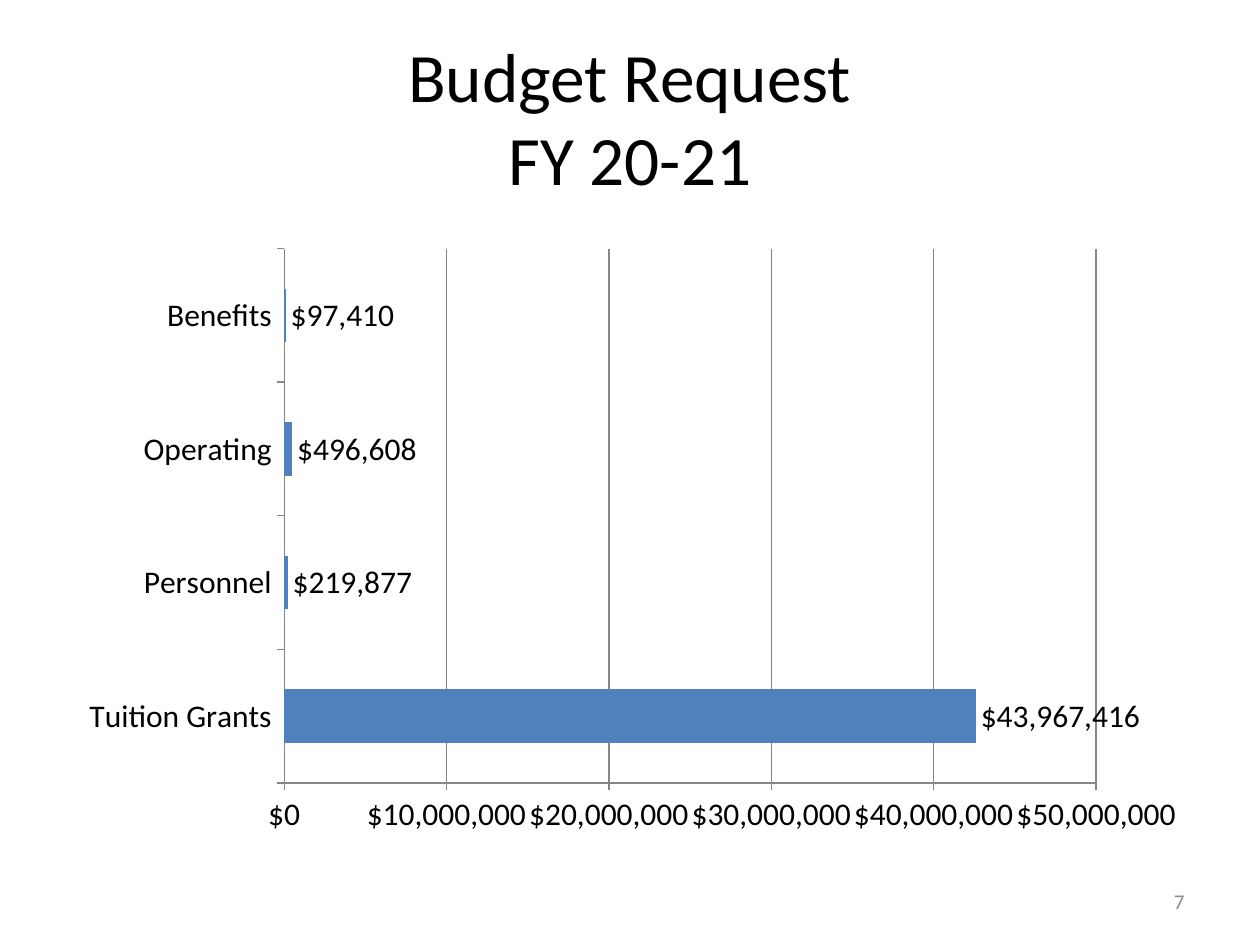
from dataclasses import dataclass

from lxml.etree import SubElement
from pptx import Presentation
from pptx.chart.data import CategoryChartData
from pptx.dml.color import RGBColor
from pptx.enum.chart import XL_CHART_TYPE, XL_LABEL_POSITION, XL_TICK_MARK
from pptx.enum.text import MSO_ANCHOR, MSO_AUTO_SIZE, PP_ALIGN
from pptx.oxml.ns import qn
from pptx.util import Pt


@dataclass(frozen=True)
class Theme:
    """Colours, font and type sizes of the slide."""
    font: str = "Calibri"
    text: RGBColor = RGBColor(0x00, 0x00, 0x00)
    muted: RGBColor = RGBColor(0x8C, 0x8C, 0x8C)
    bar: RGBColor = RGBColor(0x4F, 0x81, 0xBD)
    grid: RGBColor = RGBColor(0x86, 0x86, 0x86)
    title_size: float = 39.6
    chart_size: float = 18
    number_size: float = 12


THEME = Theme()
CURRENCY = '"$"#,##0'
BUDGET = {"Tuition Grants": 42598455, "Personnel": 219877, "Operating": 496608, "Benefits": 95796}
LABEL_OVERRIDES = {0: "$43,967,416", 3: "$97,410"}
PLOT_LAYOUT = {"layoutTarget": "inner", "xMode": "edge", "yMode": "edge",
               "x": 0.195, "y": 0.045, "w": 0.716, "h": 0.857}


def style_font(font, size, color):
    """Apply the theme font with a size and colour."""
    font.name = THEME.font
    font.size = Pt(size)
    font.color.rgb = color


def write_text(shape, text, size, color, alignment):
    """Fill a shape with one formatted, vertically centred paragraph."""
    frame = shape.text_frame
    frame.text = text
    frame.word_wrap = True
    frame.auto_size = MSO_AUTO_SIZE.NONE
    frame.vertical_anchor = MSO_ANCHOR.MIDDLE
    paragraph = frame.paragraphs[0]
    paragraph.alignment = alignment
    style_font(paragraph.font, size, color)


def add_title(slide, left, top, width, height):
    """Place the slide title in its placeholder."""
    title = slide.shapes.title
    title.left, title.top, title.width, title.height = left, top, width, height
    write_text(title, "Budget Request\vFY 20-21", THEME.title_size, THEME.text, PP_ALIGN.CENTER)


def add_page_number(slide, left, top, width, height):
    """Place the page number."""
    box = slide.shapes.add_textbox(left, top, width, height)
    write_text(box, "7", THEME.number_size, THEME.muted, PP_ALIGN.RIGHT)


def set_plot_layout(chart):
    """Fix the inner plot area as fractions of the chart."""
    plot_area = chart.element.find(".//" + qn("c:plotArea"))
    for layout in plot_area.findall(qn("c:layout")):
        plot_area.remove(layout)
    layout = SubElement(plot_area, qn("c:layout"))
    plot_area.insert(0, layout)
    manual = SubElement(layout, qn("c:manualLayout"))
    for name, value in PLOT_LAYOUT.items():
        SubElement(manual, qn("c:" + name)).set("val", str(value))


def style_axes(chart):
    """Format both axes and the vertical gridlines."""
    value_axis = chart.value_axis
    value_axis.has_major_gridlines = True
    value_axis.tick_labels.number_format = CURRENCY
    value_axis.tick_labels.number_format_is_linked = False
    value_axis.minimum_scale, value_axis.maximum_scale = 0, 50_000_000
    value_axis.major_unit = 10_000_000
    for axis in (chart.category_axis, value_axis):
        axis.major_tick_mark = XL_TICK_MARK.OUTSIDE
        axis.minor_tick_mark = XL_TICK_MARK.NONE
    for part in (chart.category_axis, value_axis, value_axis.major_gridlines):
        part.format.line.color.rgb = THEME.grid
        part.format.line.width = Pt(0.75)


def label_bars(series):
    """Show bar values, with fixed wording where it is given."""
    labels = series.data_labels
    labels.show_value = True
    labels.number_format = CURRENCY
    labels.number_format_is_linked = False
    labels.position = XL_LABEL_POSITION.OUTSIDE_END
    style_font(labels.font, THEME.chart_size, THEME.text)
    for index, text in LABEL_OVERRIDES.items():
        label = series.points[index].data_label
        label.text_frame.text = text
        style_font(label.text_frame.paragraphs[0].font, THEME.chart_size, THEME.text)
        label.position = XL_LABEL_POSITION.OUTSIDE_END


def add_budget_chart(slide, left, top, width, height):
    """Place the bar chart of budget lines."""
    data = CategoryChartData(number_format=CURRENCY)
    data.categories = list(BUDGET)
    data.add_series("Series 1", list(BUDGET.values()))
    chart = slide.shapes.add_chart(
        XL_CHART_TYPE.BAR_CLUSTERED, left, top, width, height, data).chart
    chart.has_title = False
    chart.has_legend = False
    style_font(chart.font, THEME.chart_size, THEME.text)
    plot = chart.plots[0]
    plot.gap_width = 150
    plot.vary_by_categories = False
    series = plot.series[0]
    series.format.fill.solid()
    series.format.fill.fore_color.rgb = THEME.bar
    label_bars(series)
    style_axes(chart)
    set_plot_layout(chart)


def main():
    """Build and save the presentation."""
    presentation = Presentation()
    presentation.slide_width, presentation.slide_height = Pt(720), Pt(540)
    slide = presentation.slides.add_slide(presentation.slide_layouts.get_by_name("Title Only"))
    add_title(slide, Pt(36), Pt(21.6), Pt(648), Pt(90))
    add_budget_chart(slide, Pt(36), Pt(126), Pt(648), Pt(356.4))
    add_page_number(slide, Pt(516), Pt(500.4), Pt(168), Pt(28.8))
    presentation.save("out.pptx")


if __name__ == "__main__":
    main()
